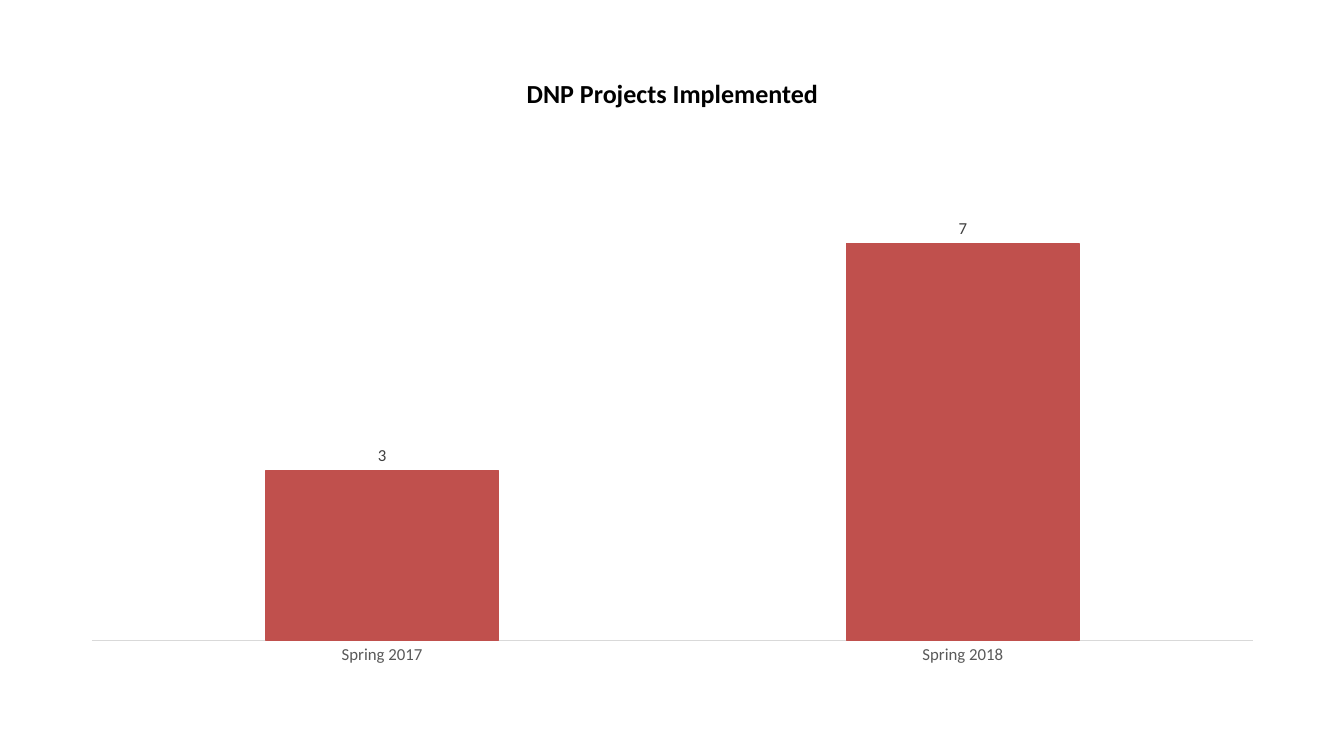
from lxml import etree
from pptx import Presentation
from pptx import util as u
from pptx.chart import data as chart_data
from pptx.dml import color
from pptx.enum import chart as ch
from pptx.enum import text

FONT = "Calibri"
COLOURS = {
    "title": "000000",
    "bar": "C0504D",
    "value": "404040",
    "category": "595959",
    "axis": "D9D9D9",
}
PROJECTS = {"Spring 2017": 3, "Spring 2018": 7}
PLOT_LAYOUT = {"x": 0.02, "y": 0.02, "w": 0.96, "h": 0.91}
CHART_NS = "http://schemas.openxmlformats.org/drawingml/2006/chart"


def rgb(name):
    return color.RGBColor.from_string(COLOURS[name])


def style_font(font, size, colour, bold=False):
    font.name = FONT
    font.size = u.Pt(size)
    font.bold = bold
    font.color.rgb = rgb(colour)


def place_title(slide, box, wording):
    title = slide.shapes.title
    title.left, title.top, title.width, title.height = map(u.Inches, box)
    frame = title.text_frame
    frame.text = wording
    frame.word_wrap = True
    frame.vertical_anchor = text.MSO_ANCHOR.MIDDLE
    para = frame.paragraphs[0]
    para.alignment = text.PP_ALIGN.CENTER
    style_font(para.runs[0].font, 18.6, "title", bold=True)


def fix_plot_area(chart):
    """Set the inner plot area as fractions of the chart."""
    plot_area = chart._chartSpace.chart.plotArea
    for old in plot_area.findall(f"{{{CHART_NS}}}layout"):
        plot_area.remove(old)
    layout = etree.Element(f"{{{CHART_NS}}}layout")
    manual = etree.SubElement(layout, f"{{{CHART_NS}}}manualLayout")
    settings = {"layoutTarget": "inner", "xMode": "edge", "yMode": "edge", **PLOT_LAYOUT}
    for tag, value in settings.items():
        etree.SubElement(manual, f"{{{CHART_NS}}}{tag}").set("val", str(value))
    plot_area.insert(0, layout)


def add_project_chart(slide, box):
    data = chart_data.CategoryChartData()
    data.categories = list(PROJECTS)
    data.add_series("Series 1", list(PROJECTS.values()))
    chart = slide.shapes.add_chart(
        ch.XL_CHART_TYPE.COLUMN_CLUSTERED, *map(u.Inches, box), data
    ).chart
    chart.has_title = False
    chart.has_legend = False
    style_font(chart.font, 10, "title")
    fix_plot_area(chart)

    # Axes
    category_axis = chart.category_axis
    category_axis.major_tick_mark = ch.XL_TICK_MARK.NONE
    category_axis.format.line.color.rgb = rgb("axis")
    category_axis.format.line.width = u.Pt(1)
    style_font(category_axis.tick_labels.font, 12, "category")
    value_axis = chart.value_axis
    value_axis.minimum_scale, value_axis.maximum_scale = 0, 8
    value_axis.has_major_gridlines = False
    value_axis.visible = False

    # Columns and their values
    plot = chart.plots[0]
    plot.gap_width, plot.overlap = 150, -27
    plot.vary_by_categories = False
    series = plot.series[0]
    series.format.fill.solid()
    series.format.fill.fore_color.rgb = rgb("bar")
    series.format.line.color.rgb = rgb("bar")
    series.format.line.width = u.Pt(0.75)
    labels = series.data_labels
    labels.show_value = True
    labels.position = ch.XL_LABEL_POSITION.OUTSIDE_END
    style_font(labels.font, 12, "value")


def main():
    deck = Presentation()
    deck.slide_width, deck.slide_height = u.Inches(13.33), u.Inches(7.5)
    slide = deck.slides.add_slide(deck.slide_layouts.get_by_name("Title Only"))
    place_title(slide, (0.67, 0.3, 12, 1.25), "DNP Projects Implemented")
    add_project_chart(slide, (0.67, 1.75, 12, 4.95))
    deck.save("out.pptx")


if __name__ == "__main__":
    main()
